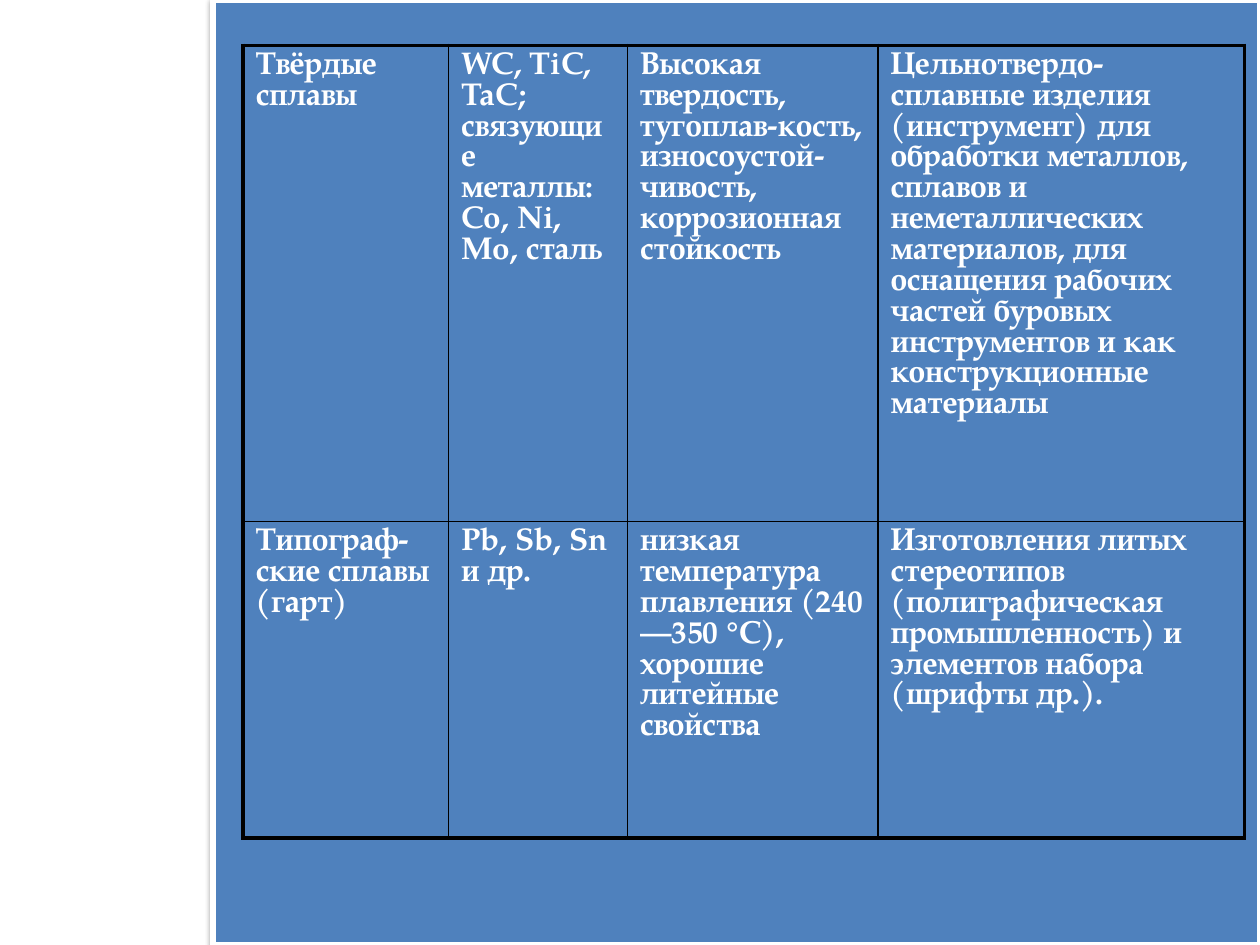
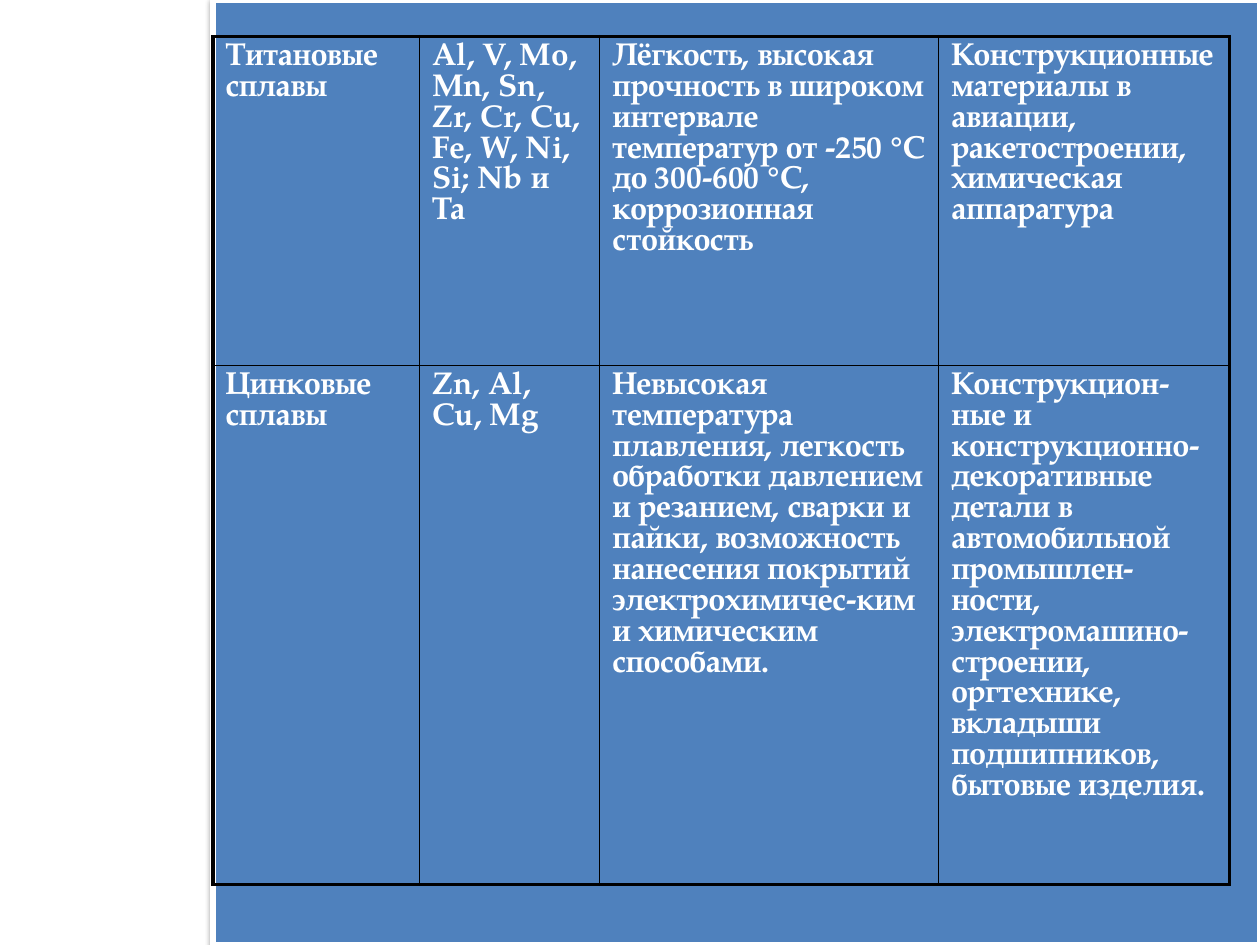
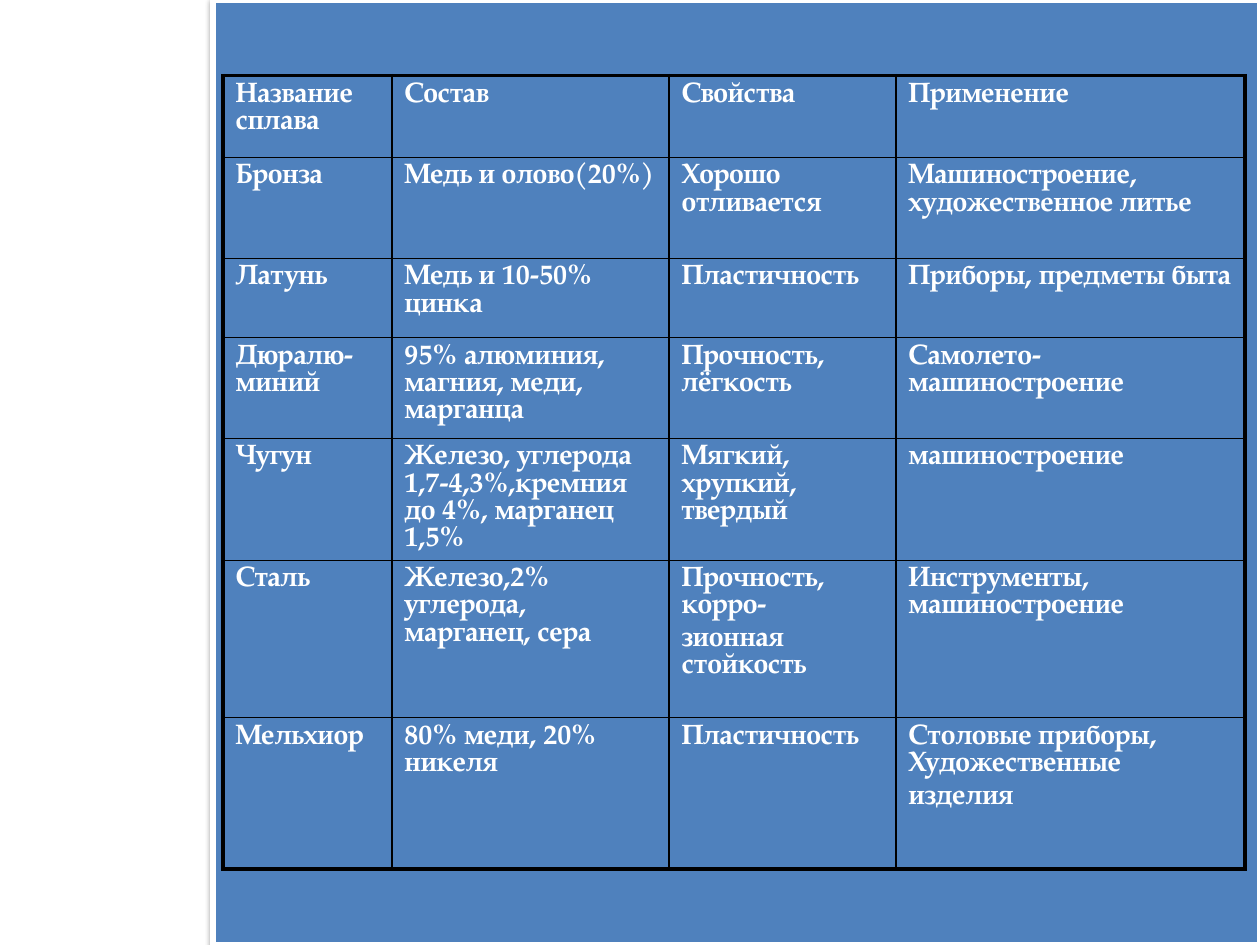
from lxml.etree import SubElement
from pptx import Presentation
from pptx.dml.color import RGBColor
from pptx.enum.shapes import MSO_SHAPE as SHAPE
from pptx.oxml.ns import qn
from pptx.util import Inches, Pt

COLORS = {"panel": "4F81BD", "edge": "FFFFFF", "text": "FFFFFF", "grid": "000000"}
FONT = "TeX Gyre Pagella"
OUTER, INNER = 2.25, 1


def rgb(name):
    return RGBColor.from_string(COLORS[name])


def write(tf, text, size=18, color="text", bold=True, gap=0.2):
    tf.word_wrap = True
    for i, line in enumerate(text.split("\n")):
        p = tf.paragraphs[0] if i == 0 else tf.add_paragraph()
        if i:
            p.space_before = Pt(round(size * gap))
        r = p.add_run()
        r.text = line
        r.font.name = FONT
        r.font.size = Pt(size)
        r.font.bold = bold
        r.font.color.rgb = rgb(color)


class Deck:
    def __init__(self):
        self.prs = Presentation()
        self.prs.slide_width = Inches(10)
        self.prs.slide_height = Inches(7.5)
        self.s = None

    def slide(self):
        self.s = self.prs.slides.add_slide(self.prs.slide_layouts[6])
        self.panel()

    def panel(self):
        sp = self.s.shapes.add_shape(SHAPE.RECTANGLE, Inches(1.69), 0, Inches(8.31), Inches(7.5))
        sp.fill.solid()
        sp.fill.fore_color.rgb = rgb("panel")
        sp.line.color.rgb = rgb("edge")
        sp.line.width = Pt(3)
        sp.shadow.inherit = False
        effects = sp._element.spPr.find(qn("a:effectLst"))
        shadow = SubElement(effects, qn("a:outerShdw"), blurRad=str(Pt(3.1)),
                            dist=str(Pt(1.6)), dir="5400000", rotWithShape="0")
        tone = SubElement(shadow, qn("a:srgbClr"), val=COLORS["grid"])
        SubElement(tone, qn("a:alpha"), val="38000")

    def borders(self, cell, widths):
        tcPr = cell._tc.get_or_add_tcPr()
        for side, width in zip("LRTB", widths):
            ln = SubElement(tcPr, qn(f"a:ln{side}"), w=str(Pt(width)))
            fill = SubElement(ln, qn("a:solidFill"))
            SubElement(fill, qn("a:srgbClr"), val=COLORS["grid"])

    def table(self, left, top, cols, heights, rows, size=18):
        frame = self.s.shapes.add_table(len(rows), len(cols), Inches(left), Inches(top),
                                        Inches(sum(cols)), Inches(sum(heights)))
        table = frame.table
        table.first_row = table.horz_banding = False
        for column, width in zip(table.columns, cols):
            column.width = Inches(width)
        for row, height in zip(table.rows, heights):
            row.height = Inches(height)
        last_row, last_col = len(rows) - 1, len(cols) - 1
        for i, row in enumerate(rows):
            for j, text in enumerate(row):
                cell = table.cell(i, j)
                write(cell.text_frame, text, size=size)
                on_edge = (j == 0, j == last_col, i == 0, i == last_row)
                self.borders(cell, [OUTER if edge else INNER for edge in on_edge])
                cell.fill.background()


HARD_ALLOYS = [
    ("Твёрдые сплавы",
     "WC, TiC, TaC; связующие металлы: Co, Ni, Mo, сталь",
     "Высокая твердость, тугоплав-кость, износоустой-чивость, коррозионная стойкость",
     "Цельнотвердо-сплавные изделия (инструмент) для обработки металлов, сплавов и "
     "неметаллических материалов, для оснащения рабочих частей буровых инструментов "
     "и как конструкционные материалы"),
    ("Типограф-ские сплавы (гарт)",
     "Pb, Sb, Sn и др.",
     "низкая температура плавления (240—350 °С), хорошие литейные свойства",
     "Изготовления литых стереотипов (полиграфическая промышленность) и элементов "
     "набора (шрифты др.)."),
]
LIGHT_ALLOYS = [
    ("Титановые сплавы",
     "Al, V, Mo, Mn, Sn, Zr, Cr, Cu, Fe, W, Ni, Si; Nb и Та",
     "Лёгкость, высокая прочность в широком интервале температур от -250 °С "
     "до 300-600 °С, коррозионная стойкость",
     "Конструкционные материалы в авиации, ракетостроении, химическая аппаратура"),
    ("Цинковые сплавы",
     "Zn, Al, Cu, Mg",
     "Невысокая температура плавления, легкость обработки давлением и резанием, "
     "сварки и пайки, возможность нанесения покрытий электрохимичес-ким "
     "и химическим способами.",
     "Конструкцион-ные и конструкционно-декоративные детали в автомобильной "
     "промышлен-ности, электромашино-строении, оргтехнике, вкладыши подшипников, "
     "бытовые изделия."),
]
COMMON_ALLOYS = [
    ("Название сплава", "Состав", "Свойства", "Применение"),
    ("Бронза", "Медь и олово(20%)", "Хорошо отливается",
     "Машиностроение, художественное литье"),
    ("Латунь", "Медь и 10-50% цинка", "Пластичность", "Приборы, предметы быта"),
    ("Дюралю-миний", "95% алюминия, магния, меди, марганца", "Прочность, лёгкость",
     "Самолето-машиностроение"),
    ("Чугун", "Железо, углерода 1,7-4,3%,кремния до 4%, марганец 1,5%",
     "Мягкий, хрупкий, твердый", "машиностроение"),
    ("Сталь", "Железо,2% углерода, марганец, сера",
     "Прочность, корро-\nзионная стойкость", "Инструменты, машиностроение"),
    ("Мельхиор", "80% меди, 20% никеля", "Пластичность",
     "Столовые приборы, Художественные\nизделия"),
]


def main():
    deck = Deck()
    deck.slide()
    deck.table(1.93, 0.36, [1.63, 1.42, 1.99, 2.91], [3.78, 2.51], HARD_ALLOYS)
    deck.slide()
    deck.table(1.69, 0.29, [1.64, 1.43, 2.69, 2.31], [2.61, 4.12], LIGHT_ALLOYS)
    deck.slide()
    deck.table(1.77, 0.6, [1.34, 2.2, 1.8, 2.77],
               [0.65, 0.8, 0.63, 0.8, 0.81, 1.25, 1.2], COMMON_ALLOYS, size=16)
    deck.prs.save("out.pptx")


if __name__ == "__main__":
    main()
